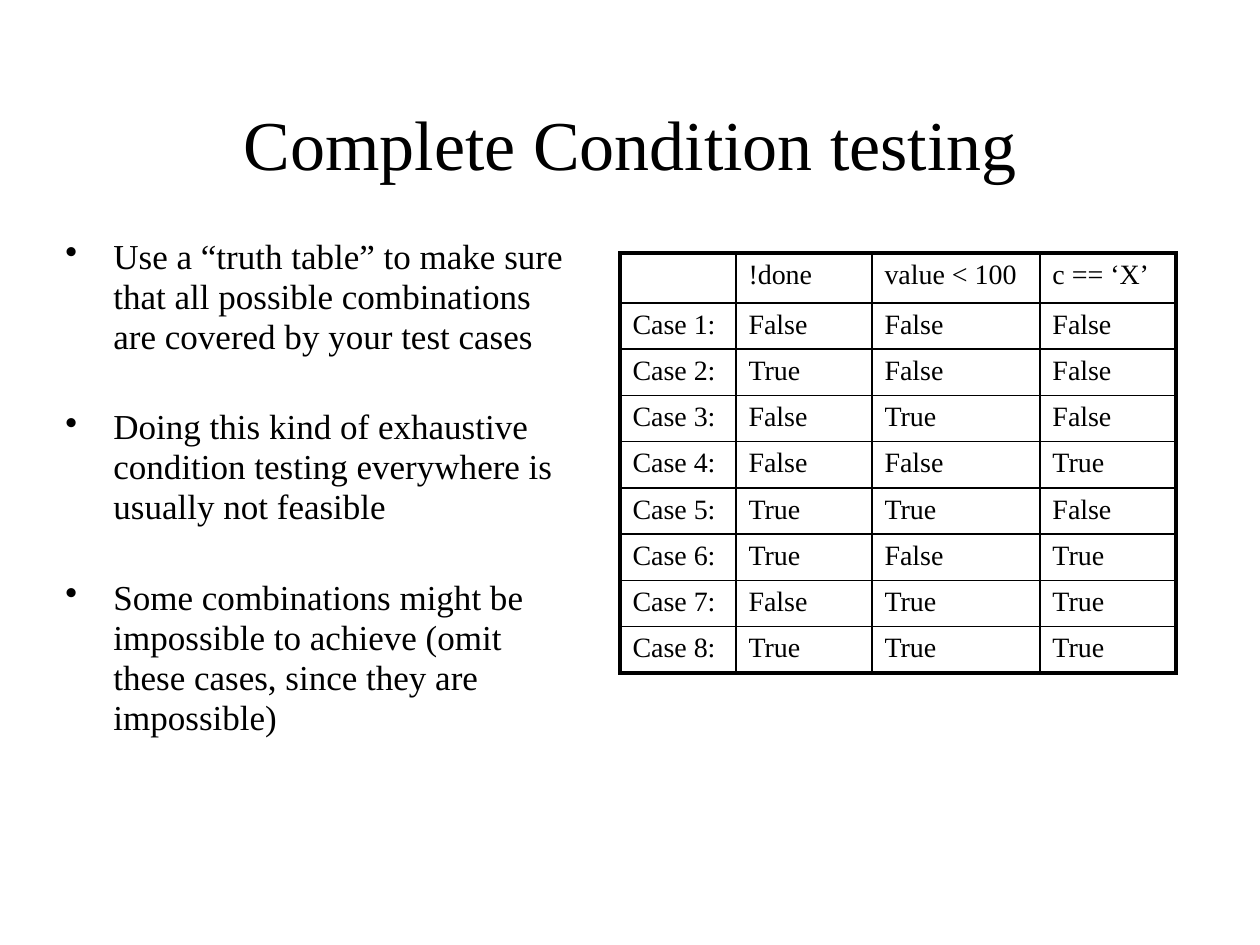
from lxml.etree import SubElement
from pptx import Presentation
from pptx.dml.color import RGBColor
from pptx.enum.text import MSO_ANCHOR, PP_ALIGN
from pptx.oxml.ns import qn
from pptx.util import Emu, Pt

PX_PER_INCH = 126
FONT = "Times New Roman"
COLORS = {"ink": "000000", "paper": "FFFFFF"}
THIN, THICK = Pt(1), Pt(2.25)

TITLE = "Complete Condition testing"
POINTS = [
    "Use a “truth table” to make sure that all possible combinations are covered by your test cases",
    "Doing this kind of exhaustive condition testing everywhere is usually not feasible",
    "Some combinations might be impossible to achieve (omit these cases, since they are impossible)",
]
CONDITIONS = ["!done", "value < 100", "c == ‘X’"]
CASES = ["FFF", "TFF", "FTF", "FFT", "TTF", "TFT", "FTT", "TTT"]
WORDS = {"T": "True", "F": "False"}
COLUMN_WIDTHS = [116, 136, 168, 136]
HEADER_HEIGHT, CASE_HEIGHT = 50, 44


def px(length):
    return Emu(round(length * 914400 / PX_PER_INCH))


def color(name):
    return RGBColor.from_string(COLORS[name])


def style(para, size):
    para.font.name = FONT
    para.font.size = Pt(size)
    para.font.color.rgb = color("ink")


def add_frame(page, box):
    frame = page.shapes.add_textbox(*map(px, box)).text_frame
    frame.word_wrap = True
    return frame


def add_title(page, box):
    frame = add_frame(page, box)
    frame.vertical_anchor = MSO_ANCHOR.MIDDLE
    para = frame.paragraphs[0]
    para.text = TITLE
    para.alignment = PP_ALIGN.CENTER
    style(para, 40)


def add_bullet(para, indent):
    properties = para._p.get_or_add_pPr()
    properties.set("marL", str(px(indent)))
    properties.set("indent", str(-px(indent)))
    SubElement(properties, qn("a:buChar"), char="•")


def add_points(page, box):
    frame = add_frame(page, box)
    for index, point in enumerate(POINTS):
        para = frame.add_paragraph() if index else frame.paragraphs[0]
        para.text = point
        para.line_spacing = 0.95
        para.space_before = Pt(29 if index else 4)
        add_bullet(para, 48)
        style(para, 20)


def add_border(cell, side, width):
    line = SubElement(cell._tc.get_or_add_tcPr(), qn(f"a:{side}"), w=str(width))
    fill = SubElement(line, qn("a:solidFill"))
    SubElement(fill, qn("a:srgbClr"), val=COLORS["ink"])


def add_truth_table(page, box):
    rows = [["", *CONDITIONS]]
    for number, case in enumerate(CASES, 1):
        rows.append([f"Case {number}:", *(WORDS[letter] for letter in case)])
    last_row, last_column = len(rows) - 1, len(COLUMN_WIDTHS) - 1

    table = page.shapes.add_table(len(rows), len(COLUMN_WIDTHS), *map(px, box)).table
    table.first_row = table.horz_banding = False
    for column, width in zip(table.columns, COLUMN_WIDTHS):
        column.width = px(width)
    for r, row in enumerate(rows):
        table.rows[r].height = px(CASE_HEIGHT if r else HEADER_HEIGHT)
        for c, text in enumerate(row):
            cell = table.cell(r, c)
            cell.text = text
            style(cell.text_frame.paragraphs[0], 16)
            outer_sides = {"lnL": c == 0, "lnR": c == last_column,
                           "lnT": r == 0, "lnB": r == last_row}
            for side, outer in outer_sides.items():
                add_border(cell, side, THICK if outer else THIN)
            cell.fill.background()


def main():
    deck = Presentation()
    deck.slide_width, deck.slide_height = px(1260), px(945)
    page = deck.slides.add_slide(deck.slide_layouts[6])
    page.background.fill.solid()
    page.background.fill.fore_color.rgb = color("paper")
    add_title(page, (95, 63, 1071, 158))
    add_points(page, (53, 231, 525, 105))
    table_height = HEADER_HEIGHT + CASE_HEIGHT * len(CASES)
    add_truth_table(page, (620, 253, sum(COLUMN_WIDTHS), table_height))
    deck.save("out.pptx")


if __name__ == "__main__":
    main()
